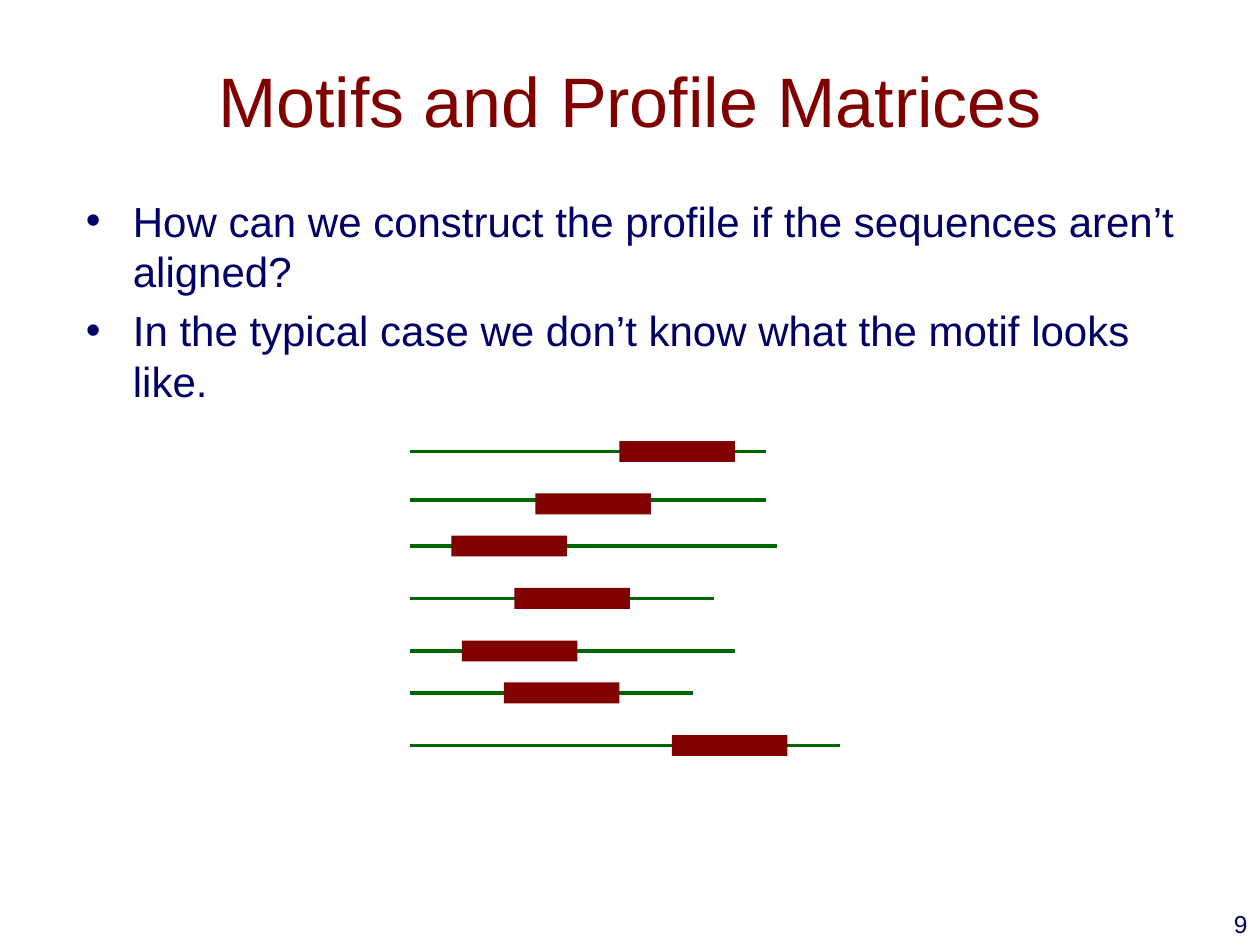
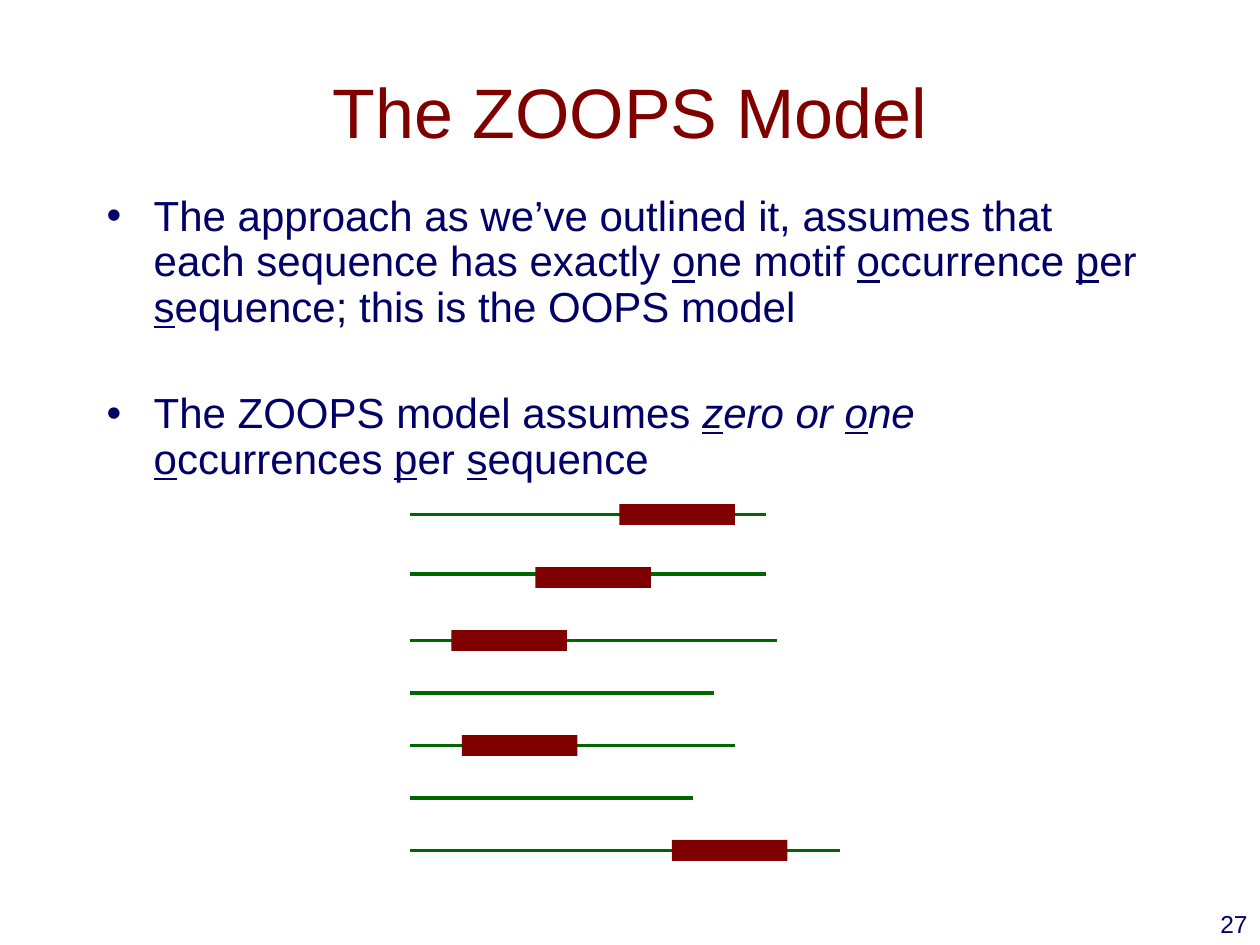
from lxml.etree import SubElement
from pptx import Presentation
from pptx.dml.color import RGBColor
from pptx.enum.shapes import MSO_CONNECTOR as CONNECTOR, MSO_SHAPE as SHAPE
from pptx.enum.text import MSO_ANCHOR as ANCHOR, PP_ALIGN as ALIGN
from pptx.oxml.ns import qn
from pptx.util import Cm, Pt

FONT = "Arial"
MAROON, NAVY, GREEN = "800000", "000066", "006600"

SLIDE_WIDTH, SLIDE_HEIGHT = Cm(25.4), Cm(19.05)
GRID = SLIDE_WIDTH / 120  # the diagrams sit on a grid of 120 columns
SEQUENCE_START = 39
MOTIF_WIDTH, MOTIF_HEIGHT = 11, 2
NUMBER_BOX = (20.11, 18.21, 5.29, 1.27)

# Grid lengths: sequence length, offset of the motif, rise of the line over the motif's middle
SEQUENCES = [
    (34, 20, 0), (34, 12, 0.35), (35, 4, 0), (29, 10, 0),
    (31, 5, 0), (27, 9, 0), (41, 25, 0),
]

# In bullets, _x_ is underlined and *x* is italic. Boxes are left, top, width, height in cm.
SLIDES = [
    dict(
        title="Motifs and Profile Matrices", title_box=(0, 0.42, 25.4, 3.18),
        bullets=[
            "How can we construct the profile if the sequences aren’t aligned?",
            "In the typical case we don’t know what the motif looks like.",
        ],
        bullets_box=(1.48, 3.81, 22.65, 5.08), line_spacing=1.0, bullet_gap=5,
        rows=[43, 48, 52, 57, 62, 66, 71], without_motif=(), number="9",
    ),
    dict(
        title="The ZOOPS Model", title_box=(1.9, 0.64, 21.6, 3.18),
        bullets=[
            "The approach as we’ve outlined it, assumes that each sequence has exactly "
            "_o_ne motif _o_ccurrence _p_er _s_equence; this is the OOPS model",
            "The ZOOPS model assumes *_z_ero or _o_ne *_o_ccurrences _p_er _s_equence",
        ],
        bullets_box=(1.9, 3.81, 21.6, 3.6), line_spacing=0.9, bullet_gap=35,
        rows=[49, 55, 61, 66, 71, 76, 81], without_motif=(3, 5), number="27",
    ),
]


def rgb(color):
    return RGBColor.from_string(color)


def styled_pieces(text):
    """Yield (piece, italic, underlined) for text marked with * and _."""
    for i, part in enumerate(text.split("*")):
        for j, piece in enumerate(part.split("_")):
            if piece:
                yield piece, i % 2 == 1, j % 2 == 1


def add_bullet(paragraph):
    properties = paragraph._p.get_or_add_pPr()
    properties.set("marL", str(Cm(0.95)))
    properties.set("indent", str(-Cm(0.95)))
    SubElement(properties, qn("a:buFont"), typeface=FONT)
    SubElement(properties, qn("a:buChar"), char="•")


def add_text(slide, paragraphs, box, size, color, align=ALIGN.LEFT, anchor=ANCHOR.TOP,
             bulleted=False, line_spacing=1.0, first_gap=0, gap=0):
    frame = slide.shapes.add_textbox(*map(Cm, box)).text_frame
    frame.word_wrap = True
    frame.vertical_anchor = anchor
    for i, text in enumerate(paragraphs):
        paragraph = frame.add_paragraph() if i else frame.paragraphs[0]
        paragraph.alignment = align
        paragraph.line_spacing = line_spacing
        paragraph.space_before = Pt(gap if i else first_gap)
        if bulleted:
            add_bullet(paragraph)
        for piece, italic, underlined in styled_pieces(text):
            run = paragraph.add_run()
            run.text = piece
            font = run.font
            font.name, font.size = FONT, Pt(size)
            font.italic, font.underline = italic, underlined
            font.color.rgb = rgb(color)


def on_grid(*lengths):
    return [round(length * GRID) for length in lengths]


def add_sequence(slide, length, y):
    line = slide.shapes.add_connector(
        CONNECTOR.STRAIGHT, *on_grid(SEQUENCE_START, y, SEQUENCE_START + length, y))
    line.line.color.rgb = rgb(GREEN)
    line.line.width = Pt(2.25)
    SubElement(line._element.spPr, qn("a:effectLst"))


def add_motif(slide, offset, middle):
    motif = slide.shapes.add_shape(SHAPE.RECTANGLE, *on_grid(
        SEQUENCE_START + offset, middle - MOTIF_HEIGHT / 2, MOTIF_WIDTH, MOTIF_HEIGHT))
    motif.shadow.inherit = False
    motif.fill.solid()
    motif.fill.fore_color.rgb = rgb(MAROON)
    motif.line.fill.background()


def add_diagram(slide, rows, without_motif):
    for i, (middle, (length, offset, rise)) in enumerate(zip(rows, SEQUENCES)):
        add_sequence(slide, length, middle - rise)
        if i not in without_motif:
            add_motif(slide, offset, middle)


def main():
    deck = Presentation()
    deck.slide_width, deck.slide_height = SLIDE_WIDTH, SLIDE_HEIGHT
    for content in SLIDES:
        slide = deck.slides.add_slide(deck.slide_layouts[6])
        add_text(slide, [content["title"]], content["title_box"], 40, MAROON,
                 align=ALIGN.CENTER, anchor=ANCHOR.MIDDLE)
        add_diagram(slide, content["rows"], content["without_motif"])
        add_text(slide, content["bullets"], content["bullets_box"], 24, NAVY, bulleted=True,
                 line_spacing=content["line_spacing"], first_gap=5, gap=content["bullet_gap"])
        add_text(slide, [content["number"]], NUMBER_BOX, 14, NAVY, align=ALIGN.RIGHT)
    deck.save("out.pptx")


if __name__ == "__main__":
    main()
